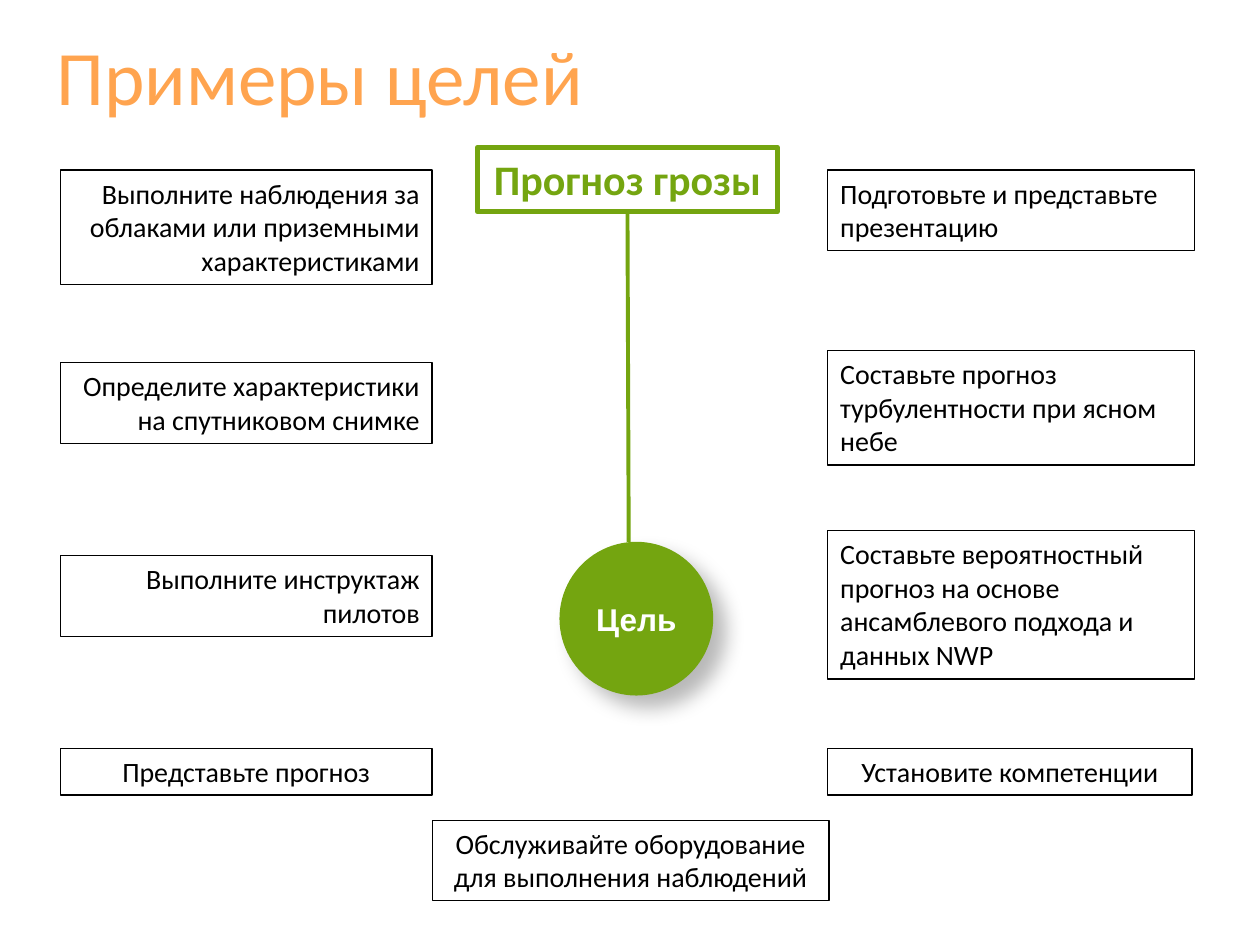
import pptx
import pptx.util
import pptx.dml.color
import pptx.enum.shapes
import pptx.enum.text
import pptx.oxml
from dataclasses import dataclass
from pptx.util import Inches

ALIGN = pptx.enum.text.PP_ALIGN
ANCHOR = pptx.enum.text.MSO_ANCHOR
AUTO_SIZE = pptx.enum.text.MSO_AUTO_SIZE
SHAPE = pptx.enum.shapes.MSO_SHAPE
DRAWING_NS = 'xmlns:a="http://schemas.openxmlformats.org/drawingml/2006/main"'


@dataclass(frozen=True)
class Theme:
    green: str = "74A510"
    orange: str = "FFA44F"
    black: str = "000000"
    white: str = "FFFFFF"
    body_font: str = "Calibri"
    goal_font: str = "Arial"
    title_size: int = 44
    topic_size: int = 24
    goal_size: int = 18
    body_size: int = 16


THEME = Theme()


def rgb(color):
    return pptx.dml.color.RGBColor.from_string(color)


def write_text(shape, text, size, color, align=ALIGN.LEFT, font=THEME.body_font,
               bold=False, **frame_format):
    frame = shape.text_frame
    frame_values = {"word_wrap": True, "vertical_anchor": ANCHOR.TOP, **frame_format}
    for name, value in frame_values.items():
        setattr(frame, name, value)
    paragraph = frame.paragraphs[0]
    paragraph.alignment = align
    run = paragraph.add_run()
    run.text = text
    font_values = {"name": font, "size": pptx.util.Pt(size), "bold": bold}
    for name, value in font_values.items():
        setattr(run.font, name, value)
    run.font.color.rgb = rgb(color)


def add_plain_shape(slide, kind, box, fill=None, line=None, line_width=0.75):
    shape = slide.shapes.add_shape(kind, *(Inches(value) for value in box))
    shape.shadow.inherit = False
    if fill:
        shape.fill.solid()
        shape.fill.fore_color.rgb = rgb(fill)
    else:
        shape.fill.background()
    if line:
        shape.line.color.rgb = rgb(line)
        shape.line.width = pptx.util.Pt(line_width)
    else:
        shape.line.fill.background()
    return shape


def add_effects(shape, content=""):
    for old in shape._element.spPr.findall(
            "{http://schemas.openxmlformats.org/drawingml/2006/main}effectLst"):
        shape._element.spPr.remove(old)
    shape._element.spPr.append(pptx.oxml.parse_xml(
        f"<a:effectLst {DRAWING_NS}>{content}</a:effectLst>"))


def add_title(slide, box):
    title = slide.shapes.add_textbox(*(Inches(value) for value in box))
    write_text(title, "Примеры целей", THEME.title_size, THEME.orange,
               vertical_anchor=ANCHOR.MIDDLE)


def add_goal_diagram(slide, topic_box, goal_box):
    # Topic
    topic = add_plain_shape(slide, SHAPE.RECTANGLE, topic_box,
                            THEME.white, THEME.green, 3)
    write_text(topic, "Прогноз грозы", THEME.topic_size, THEME.green, ALIGN.CENTER,
               bold=True, word_wrap=False, auto_size=AUTO_SIZE.SHAPE_TO_FIT_TEXT)

    # Line from the topic down to the goal
    left, top, width, height = topic_box
    center = left + width / 2
    connector = slide.shapes.add_connector(
        pptx.enum.shapes.MSO_CONNECTOR.STRAIGHT, Inches(center),
        Inches(top + height), Inches(center + 0.01), Inches(goal_box[1]))
    connector.begin_connect(topic, 2)
    connector.line.color.rgb = rgb(THEME.green)
    connector.line.width = pptx.util.Pt(2.25)
    add_effects(connector)

    # Goal
    goal = add_plain_shape(slide, SHAPE.OVAL, goal_box, THEME.green)
    write_text(goal, "Цель", THEME.goal_size, THEME.white, ALIGN.CENTER,
               THEME.goal_font, True, vertical_anchor=ANCHOR.MIDDLE)
    add_effects(goal, f'<a:outerShdw blurRad="{pptx.util.Pt(11.8)}" '
                      f'dist="{pptx.util.Pt(10)}" dir="2700000" algn="tl" rotWithShape="0">'
                      f'<a:srgbClr val="{THEME.black}"><a:alpha val="28000"/></a:srgbClr>'
                      '</a:outerShdw>')


def add_example(slide, box, text, align):
    shape = add_plain_shape(slide, SHAPE.RECTANGLE, box, line=THEME.black)
    write_text(shape, text, THEME.body_size, THEME.black, align,
               auto_size=AUTO_SIZE.SHAPE_TO_FIT_TEXT)


def add_example_column(slide, box, step, examples, align):
    """Stack examples, given as (line count, text), at equal steps."""
    left, top, width = box
    for index, (lines, text) in enumerate(examples):
        height = 0.1 + 0.27 * lines
        add_example(slide, (left, top + index * step, width, height), text, align)


def main():
    presentation = pptx.Presentation()
    presentation.slide_width = Inches(10)
    presentation.slide_height = Inches(7.5)
    slide = presentation.slides.add_slide(presentation.slide_layouts[6])

    add_goal_diagram(slide, (3.79, 1.17, 2.38, 0.51), (4.44, 4.3, 1.22, 1.22))

    # Right and left columns
    add_example_column(slide, (6.57, 1.35, 2.91), 1.43, [
        (2, "Подготовьте и представьте презентацию"),
        (3, "Составьте прогноз турбулентности при ясном небе"),
        (4, "Составьте вероятностный прогноз на основе ансамблевого подхода и данных NWP"),
    ], ALIGN.LEFT)
    add_example_column(slide, (0.48, 1.35, 2.95), 1.53, [
        (3, "Выполните наблюдения за облаками или приземными характеристиками"),
        (2, "Определите характеристики на спутниковом снимке"),
        (2, "Выполните инструктаж пилотов"),
    ], ALIGN.RIGHT)

    # Centred examples along the bottom
    for box, text in [
        ((6.57, 5.94, 2.89, 0.37), "Установите компетенции"),
        ((0.48, 5.94, 2.95, 0.37), "Представьте прогноз"),
        ((3.43, 6.51, 3.15, 0.64), "Обслуживайте оборудование для выполнения наблюдений"),
    ]:
        add_example(slide, box, text, ALIGN.CENTER)

    add_title(slide, (0.35, 0.09, 8.94, 1))
    presentation.save("out.pptx")


if __name__ == "__main__":
    main()
